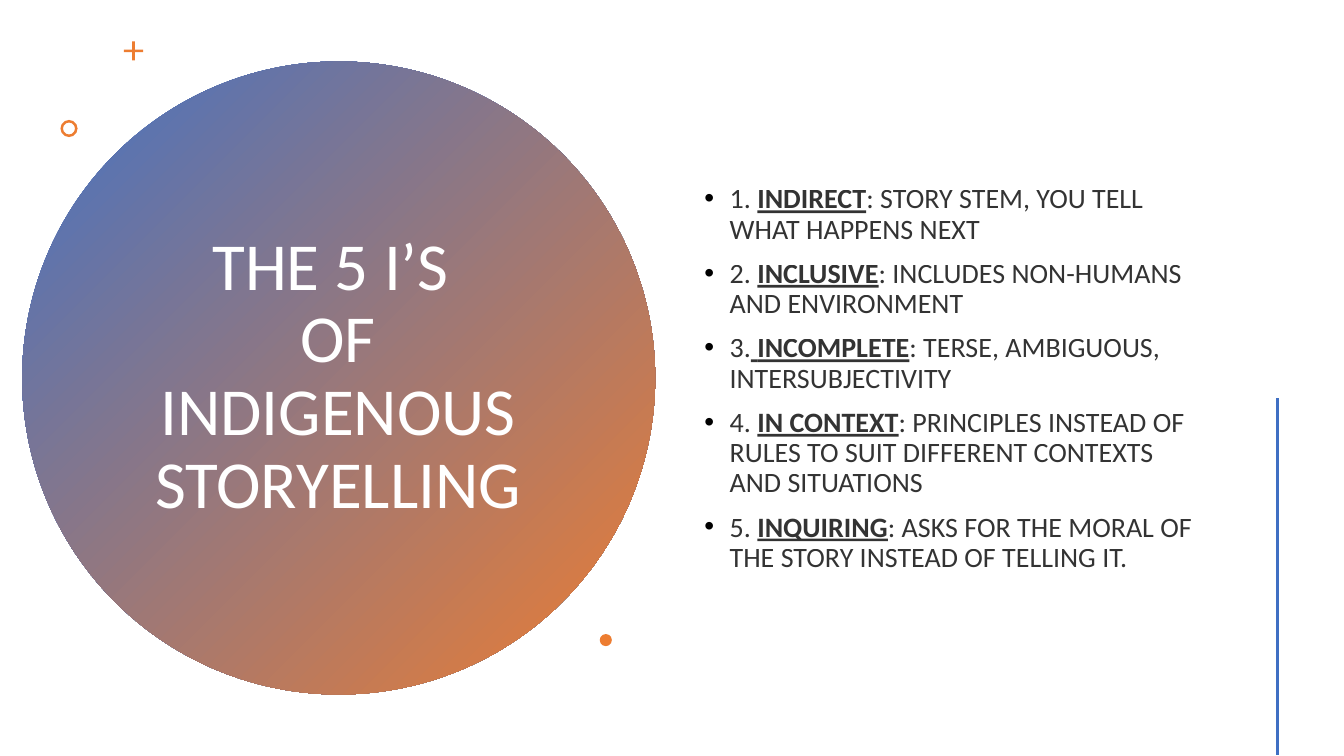
from dataclasses import dataclass

from lxml import etree
from pptx import Presentation
from pptx.dml.color import RGBColor
from pptx.enum.shapes import MSO_CONNECTOR, MSO_SHAPE
from pptx.enum.text import MSO_ANCHOR, PP_ALIGN
from pptx.oxml.ns import qn
from pptx.util import Inches, Pt

RECTANGLE, OVAL = MSO_SHAPE.RECTANGLE, MSO_SHAPE.OVAL
CROSS, DONUT = MSO_SHAPE.CROSS, MSO_SHAPE.DONUT
STRAIGHT = MSO_CONNECTOR.STRAIGHT
MIDDLE, CENTER = MSO_ANCHOR.MIDDLE, PP_ALIGN.CENTER

# Square grid: 40 columns by 22.5 rows
SLIDE_WIDTH, SLIDE_HEIGHT = Inches(40 / 3), Inches(7.5)
COLUMNS, ROWS = 40, 22.5
CELL = SLIDE_WIDTH / COLUMNS


@dataclass(frozen=True)
class Theme:
    font: str = "Calibri"
    title_size: int = 48
    body_size: int = 20
    line_spacing: float = 0.9
    point_gap: int = 10
    text_opacity: int = 80
    white: str = "FFFFFF"
    black: str = "000000"
    blue: str = "4472C4"
    orange: str = "ED7D31"
    rule_blue: str = "3F6FC3"


@dataclass(frozen=True)
class Area:
    column: float
    row: float
    columns: float
    rows: float

    def box(self) -> list[int]:
        return [grid(n) for n in (self.column, self.row, self.columns, self.rows)]


@dataclass(frozen=True)
class Figure:
    kind: int
    area: Area
    colors: tuple[str, ...]
    thickness: float | None = None


@dataclass(frozen=True)
class Point:
    keyword: str
    detail: str
    underlined_gap: bool = False


THEME = Theme()

BACKDROP = Figure(RECTANGLE, Area(0, 0, COLUMNS, ROWS), (THEME.white,))
DISC = Figure(OVAL, Area(0.66, 1.83, 18.84, 18.84), (THEME.blue, THEME.orange))
ORNAMENTS = [
    Figure(CROSS, Area(3.69, 1.23, 0.57, 0.57), (THEME.orange,), 0.43),
    Figure(DONUT, Area(1.8, 3.57, 0.51, 0.51), (THEME.orange,), 0.15),
    Figure(OVAL, Area(17.85, 18.87, 0.36, 0.36), (THEME.orange,)),
]
TITLE = "THE 5 I’S \vOF INDIGENOUS STORYELLING"
TITLE_AREA = Area(4.08, 4.23, 11.97, 14.01)
POINTS = [
    Point("INDIRECT", "STORY STEM, YOU TELL WHAT HAPPENS NEXT"),
    Point("INCLUSIVE", "INCLUDES NON-HUMANS AND ENVIRONMENT"),
    Point("INCOMPLETE", "TERSE, AMBIGUOUS, INTERSUBJECTIVITY", True),
    Point("IN CONTEXT", "PRINCIPLES INSTEAD OF RULES TO SUIT DIFFERENT CONTEXTS AND SITUATIONS"),
    Point("INQUIRING", "ASKS FOR THE MORAL OF THE STORY INSTEAD OF TELLING IT."),
]
POINTS_AREA = Area(20.67, 1.71, 15.66, 19.14)
RULE_COLUMN, RULE_TOP, RULE_BOTTOM = 38.01, 11.85, 22.47


def grid(cells: float) -> int:
    return round(cells * CELL)


def rgb(color: str) -> RGBColor:
    return RGBColor.from_string(color)


def draw_figure(slide, figure: Figure) -> None:
    shape = slide.shapes.add_shape(figure.kind, *figure.area.box())
    shape.shadow.inherit = False
    shape.line.fill.background()
    if figure.thickness is not None:
        shape.adjustments[0] = figure.thickness
    if len(figure.colors) == 1:
        shape.fill.solid()
        shape.fill.fore_color.rgb = rgb(figure.colors[0])
    else:
        shape.fill.gradient()
        shape.fill.gradient_angle = 315
        for stop, color in zip(shape.fill.gradient_stops, figure.colors):
            stop.color.rgb = rgb(color)


def add_text_frame(slide, area: Area):
    frame = slide.shapes.add_textbox(*area.box()).text_frame
    frame.word_wrap = True
    frame.vertical_anchor = MIDDLE
    return frame


def style_run(run, size: int, color: str) -> None:
    run.font.name = THEME.font
    run.font.size = Pt(size)
    run.font.color.rgb = rgb(color)


def add_bullet(paragraph) -> None:
    properties = paragraph._p.get_or_add_pPr()
    properties.set("marL", str(Inches(0.25)))
    properties.set("indent", str(-Inches(0.25)))
    bullet_color = etree.SubElement(properties, qn("a:buClr"))
    etree.SubElement(bullet_color, qn("a:srgbClr"), val=THEME.black)
    etree.SubElement(properties, qn("a:buFont"), typeface="Arial")
    etree.SubElement(properties, qn("a:buChar"), char="•")


def write_point(paragraph, number: int, point: Point) -> None:
    paragraph.line_spacing = THEME.line_spacing
    paragraph.space_before = Pt(THEME.point_gap)
    add_bullet(paragraph)
    pieces = [  # text, bold, underlined
        (f"{number}.", False, False),
        (" ", False, point.underlined_gap),
        (point.keyword, True, True),
        (f": {point.detail}", False, False),
    ]
    for text, bold, underlined in pieces:
        run = paragraph.add_run()
        run.text = text
        style_run(run, THEME.body_size, THEME.black)
        run.font.bold = bold
        run.font.underline = underlined
        for color in run._r.iter(qn("a:srgbClr")):
            etree.SubElement(color, qn("a:alpha"), val=str(THEME.text_opacity * 1000))


def write_title(slide) -> None:
    frame = add_text_frame(slide, TITLE_AREA)
    frame.text = TITLE
    paragraph = frame.paragraphs[0]
    paragraph.alignment = CENTER
    paragraph.line_spacing = THEME.line_spacing
    for run in paragraph.runs:
        style_run(run, THEME.title_size, THEME.white)


def write_points(slide) -> None:
    frame = add_text_frame(slide, POINTS_AREA)
    for number, point in enumerate(POINTS, start=1):
        paragraph = frame.paragraphs[0] if number == 1 else frame.add_paragraph()
        write_point(paragraph, number, point)


def draw_rule(slide) -> None:
    x = grid(RULE_COLUMN)
    rule = slide.shapes.add_connector(STRAIGHT, x, grid(RULE_TOP), x, grid(RULE_BOTTOM))
    rule.line.color.rgb = rgb(THEME.rule_blue)
    rule.line.width = Pt(2)
    etree.SubElement(rule._element.spPr, qn("a:effectLst"))


def main() -> None:
    presentation = Presentation()
    presentation.slide_width, presentation.slide_height = SLIDE_WIDTH, SLIDE_HEIGHT
    slide = presentation.slides.add_slide(presentation.slide_layouts[6])

    # Backdrop and title disc
    draw_figure(slide, BACKDROP)
    draw_figure(slide, DISC)
    write_title(slide)

    # The five points
    write_points(slide)

    # Ornaments and side rule
    for ornament in ORNAMENTS:
        draw_figure(slide, ornament)
    draw_rule(slide)

    presentation.save("out.pptx")


if __name__ == "__main__":
    main()
